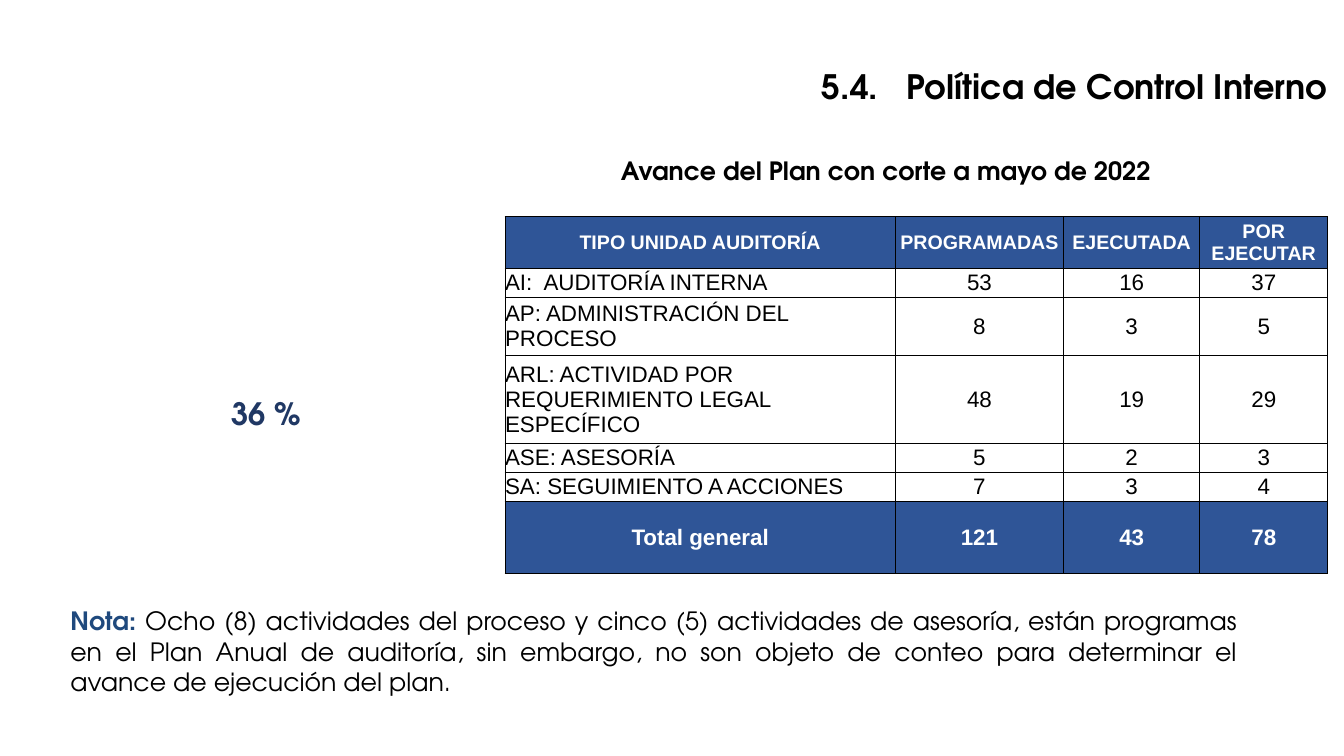
from dataclasses import dataclass

from lxml.etree import SubElement
from pptx import Presentation
from pptx.dml.color import RGBColor
from pptx.enum.text import MSO_ANCHOR, PP_ALIGN
from pptx.oxml.ns import qn
from pptx.util import Pt

EMU_PER_PX = 9144  # 100 px to the inch


@dataclass(frozen=True)
class Theme:
    display: str = "TeX Gyre Adventor"
    body: str = "Arial"
    black: str = "000000"
    white: str = "FFFFFF"
    band: str = "2F5597"
    percent: str = "203864"
    note: str = "1F497D"
    title_size: int = 24
    percent_size: int = 22
    text_size: int = 18
    cell_size: int = 16
    header_size: int = 14


THEME = Theme()

COLUMN_WIDTHS = [387, 167, 135, 127]
ROW_HEIGHTS = [51, 29, 58, 87, 29, 29, 71]
AUDIT_ROWS = [
    ["TIPO UNIDAD AUDITORÍA", "PROGRAMADAS", "EJECUTADA", "POR EJECUTAR"],
    ["AI:  AUDITORÍA INTERNA", "53", "16", "37"],
    ["AP: ADMINISTRACIÓN DEL PROCESO", "8", "3", "5"],
    ["ARL: ACTIVIDAD POR REQUERIMIENTO LEGAL ESPECÍFICO", "48", "19", "29"],
    ["ASE: ASESORÍA", "5", "2", "3"],
    ["SA: SEGUIMIENTO A ACCIONES", "7", "3", "4"],
    ["Total general", "121", "43", "78"],
]
NOTE = ("Ocho (8) actividades del proceso y cinco (5) actividades de asesoría, "
        "están programas en el Plan Anual de auditoría, sin embargo, no son objeto "
        "de conteo para determinar el avance de ejecución del plan.")


def px(n):
    return n * EMU_PER_PX


def font_format(size, color=THEME.black, bold=True, name=THEME.display):
    return {"name": name, "size": Pt(size), "bold": bold, "color": color}


def add_run(p, text, fmt):
    r = p.add_run()
    r.text = text
    for key, value in fmt.items():
        if key == "color":
            r.font.color.rgb = RGBColor.from_string(value)
        else:
            setattr(r.font, key, value)


def add_text(s, box, runs, align=PP_ALIGN.LEFT, anchor=MSO_ANCHOR.TOP):
    tf = s.shapes.add_textbox(*map(px, box)).text_frame
    tf.word_wrap = True
    tf.vertical_anchor = anchor
    p = tf.paragraphs[0]
    p.alignment = align
    for text, fmt in runs:
        add_run(p, text, fmt)


def set_borders(cell):
    tcPr = cell._tc.get_or_add_tcPr()
    for position, side in enumerate(("lnL", "lnR", "lnT", "lnB")):
        ln = SubElement(tcPr, qn(f"a:{side}"), w=str(Pt(1)))
        fill = SubElement(ln, qn("a:solidFill"))
        SubElement(fill, qn("a:srgbClr"), val=THEME.black)
        tcPr.insert(position, ln)  # borders come before the fill


def fill_cell(cell, text, fmt, align, banded):
    margins = ("margin_left", "margin_right", "margin_top", "margin_bottom")
    for key, value in {**dict.fromkeys(margins, 0),
                       "vertical_anchor": MSO_ANCHOR.MIDDLE}.items():
        setattr(cell, key, value)
    if banded:
        cell.fill.solid()
        cell.fill.fore_color.rgb = RGBColor.from_string(THEME.band)
    else:
        cell.fill.background()
    p = cell.text_frame.paragraphs[0]
    p.alignment = align
    add_run(p, text, fmt)
    set_borders(cell)


def add_audit_table(s, left, top):
    size = len(AUDIT_ROWS), len(COLUMN_WIDTHS)
    box = left, top, sum(COLUMN_WIDTHS), sum(ROW_HEIGHTS)
    table = s.shapes.add_table(*size, *map(px, box)).table
    for column, width in zip(table.columns, COLUMN_WIDTHS):
        column.width = px(width)
    for row, height in zip(table.rows, ROW_HEIGHTS):
        row.height = px(height)

    last = len(AUDIT_ROWS) - 1
    for i, values in enumerate(AUDIT_ROWS):
        banded = i in (0, last)
        fmt = font_format(THEME.header_size if i == 0 else THEME.cell_size,
                          THEME.white if banded else THEME.black,
                          banded, THEME.body)
        for j, text in enumerate(values):
            centred = banded or j > 0
            align = PP_ALIGN.CENTER if centred else PP_ALIGN.LEFT
            fill_cell(table.cell(i, j), text, fmt, align, banded)


def main():
    prs = Presentation()
    prs.slide_width, prs.slide_height = px(1333), px(750)
    s = prs.slides.add_slide(prs.slide_layouts[6])

    # Title and progress figure
    add_text(s, (259, 58, 1067, 54),
             [("5.4.   Política de Control Interno", font_format(THEME.title_size))],
             PP_ALIGN.RIGHT, MSO_ANCHOR.MIDDLE)
    add_text(s, (220, 387, 93, 47),
             [("36 %", font_format(THEME.percent_size, THEME.percent))])

    # Audit plan table with its heading
    add_audit_table(s, 501, 215)
    add_text(s, (606, 149, 631, 40),
             [("Avance del Plan con corte a mayo de 2022", font_format(THEME.text_size))])

    # Closing note
    add_text(s, (60, 596, 1177, 101),
             [("Nota: ", font_format(THEME.text_size, THEME.note)),
              (NOTE, font_format(THEME.text_size, bold=False))],
             PP_ALIGN.JUSTIFY)

    prs.save("out.pptx")


if __name__ == "__main__":
    main()
